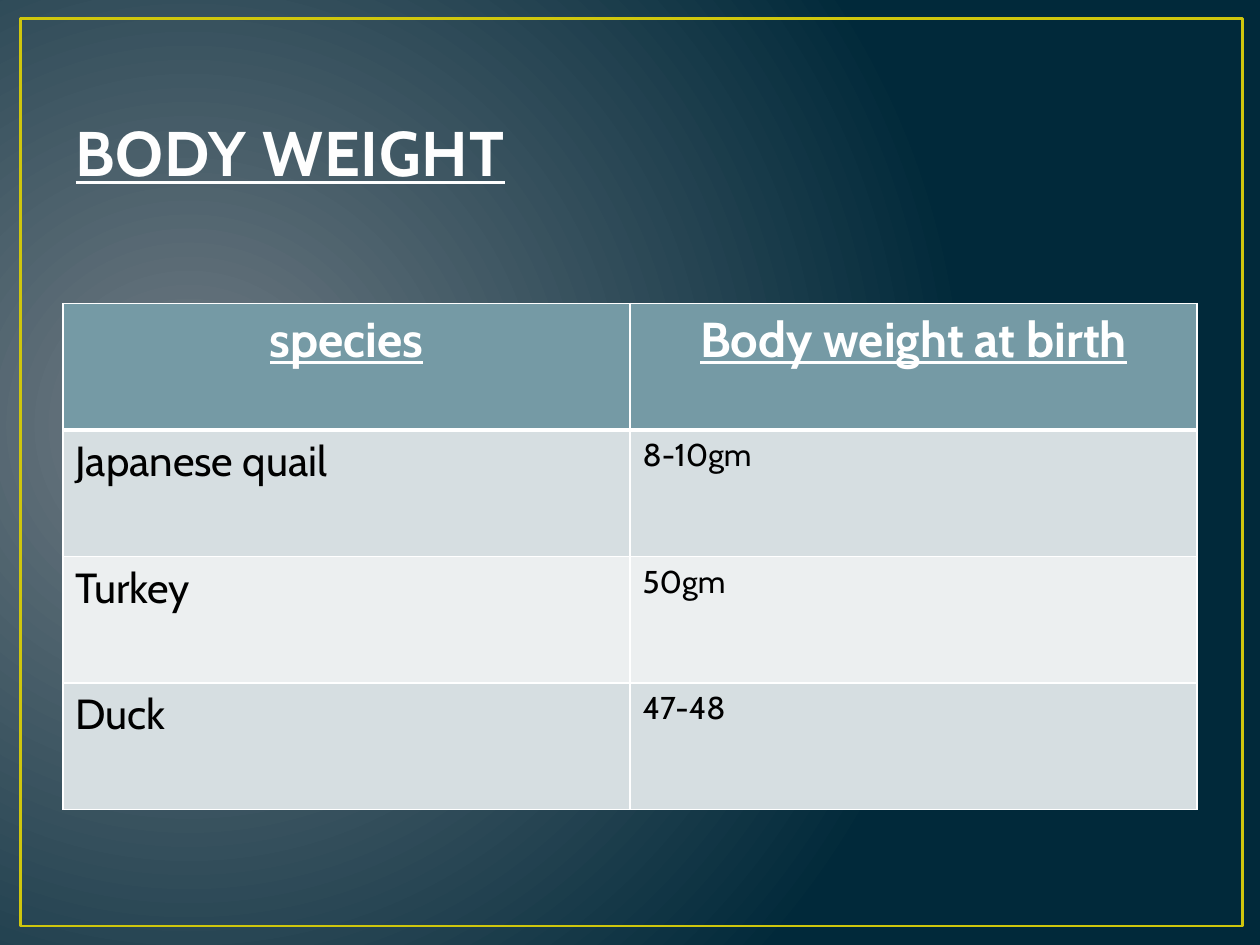
from pptx import Presentation
from pptx.dml.color import RGBColor as RGB
from pptx.enum.shapes import MSO_SHAPE as SHAPE
from pptx.enum.text import MSO_ANCHOR as ANCHOR, MSO_AUTO_SIZE as AUTO, PP_ALIGN as ALIGN
from pptx.oxml import parse_xml
from pptx.oxml.ns import nsdecls
from pptx.util import Cm, Pt

COLORS = {
    "glow": "717C84", "night": "01293A", "frame": "CFC60D", "title": "FEFEFE",
    "white": "FFFFFF", "text": "000000", "header": "759AA5",
    "odd": "D6DEE1", "even": "ECEFF0",
}
FONT = "Cabin"
ROWS = [
    ("species", "Body weight at birth"),
    ("Japanese quail", "8-10gm"),
    ("Turkey", "50gm"),
    ("Duck", "47-48"),
]


def style_run(r, size, color, strong=False):
    r.font.name = FONT
    r.font.size = Pt(size)
    r.font.bold = strong
    r.font.underline = strong
    r.font.color.rgb = RGB.from_string(COLORS[color])


def set_borders(cell, widths):
    tcPr = cell._tc.get_or_add_tcPr()
    for i, (side, width) in enumerate(widths.items()):
        tcPr.insert(i, parse_xml(
            f'<a:ln{side} {nsdecls("a")} w="{Pt(width)}"><a:solidFill>'
            f'<a:srgbClr val="{COLORS["white"]}"/></a:solidFill></a:ln{side}>'))


prs = Presentation()
prs.slide_width, prs.slide_height = Cm(25.4), Cm(19.05)
s = prs.slides.add_slide(prs.slide_layouts[5])

s._element.cSld.insert(0, parse_xml(
    f'<p:bg {nsdecls("p", "a")}><p:bgPr><a:gradFill rotWithShape="1"><a:gsLst>'
    f'<a:gs pos="0"><a:srgbClr val="{COLORS["glow"]}"/></a:gs>'
    f'<a:gs pos="100000"><a:srgbClr val="{COLORS["night"]}"/></a:gs></a:gsLst>'
    '<a:path path="circle"><a:fillToRect l="15000" t="50000" r="85000" b="60000"/></a:path>'
    '</a:gradFill><a:effectLst/></p:bgPr></p:bg>'))

frame = s.shapes.add_shape(SHAPE.RECTANGLE, Cm(0.41), Cm(0.38), Cm(24.64), Cm(18.29))
frame.shadow.inherit = False
frame.fill.background()
frame.line.color.rgb = RGB.from_string(COLORS["frame"])
frame.line.width = Pt(1.5)

title = s.shapes.title
title.left, title.top, title.width, title.height = Cm(1.27), Cm(0.76), Cm(22.86), Cm(3.18)
tf = title.text_frame
tf.text = "BODY WEIGHT"
tf.auto_size = AUTO.NONE
tf.vertical_anchor = ANCHOR.BOTTOM
p = tf.paragraphs[0]
p.alignment = ALIGN.LEFT
style_run(p.runs[0], 36, "title", strong=True)
p.runs[0].font._element.set("spc", "50")

table = s.shapes.add_table(len(ROWS), 2, Cm(1.27), Cm(6.12), Cm(22.86), Cm(10.2)).table
for i, values in enumerate(ROWS):
    is_header = i == 0
    fill = "header" if is_header else "odd" if i % 2 else "even"
    for j, value in enumerate(values):
        cell = table.cell(i, j)
        cell.text = value
        cell.fill.solid()
        cell.fill.fore_color.rgb = RGB.from_string(COLORS[fill])
        set_borders(cell, {"L": 1, "R": 1, "T": 3 if i == 1 else 1, "B": 3 if is_header else 1})
        p = cell.text_frame.paragraphs[0]
        p.alignment = ALIGN.CENTER if is_header else ALIGN.LEFT
        size = 28 if is_header else (24, 18)[j]
        style_run(p.runs[0], size, "white" if is_header else "text", strong=is_header)

prs.save("out.pptx")
